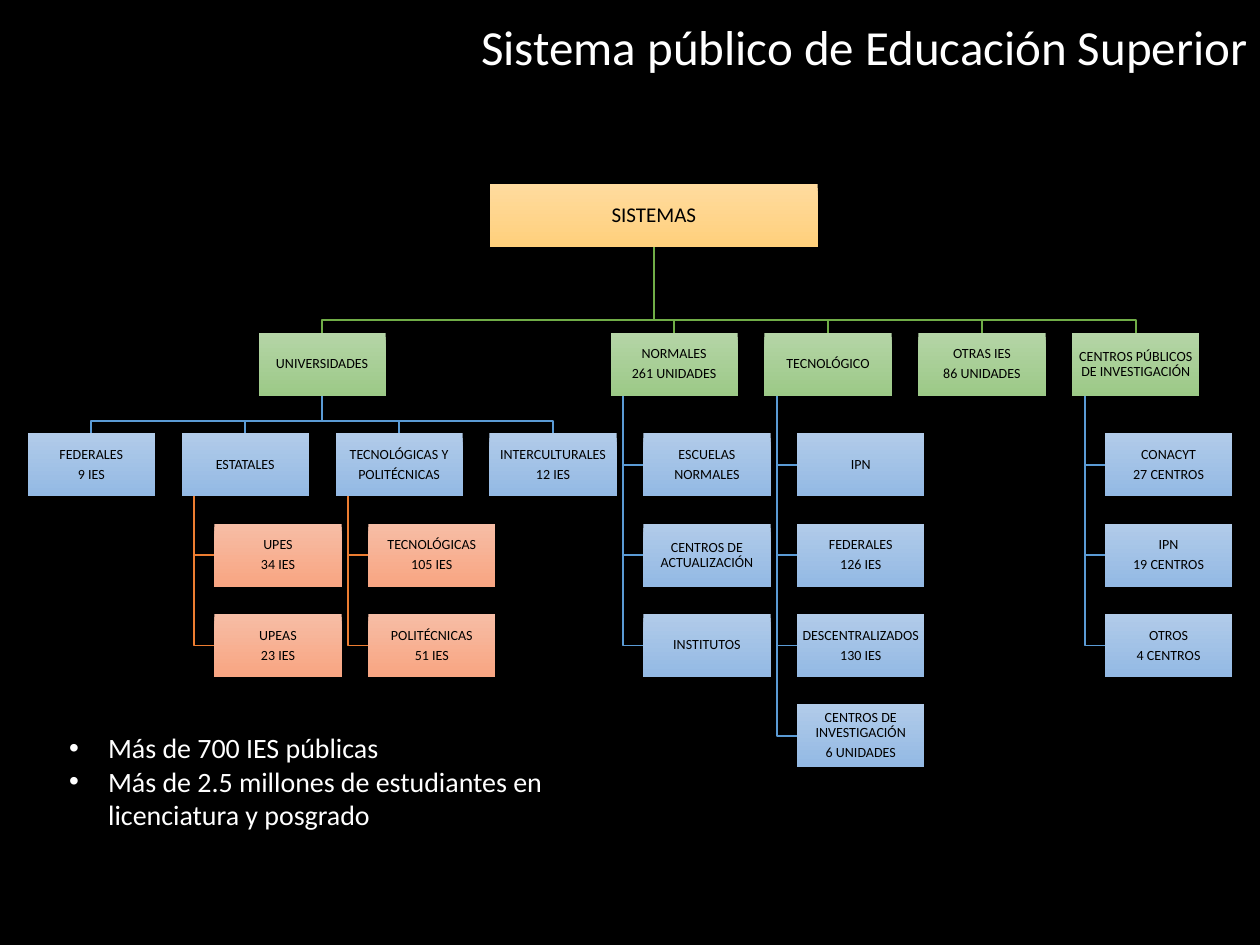
from lxml import etree
from pptx import Presentation
from pptx import util as u
from pptx.dml import color
from pptx.enum import shapes, text
from pptx.oxml import ns

FONT = "Calibri"
BOX_W, BOX_H = 1.01, 0.5
LEFT, PITCH = 0.22, (8.77 - 0.22) / 7
TOP_Y, SYSTEM_Y, UNIT_Y = 1.46, 2.64, 3.44
ROW = (5.59 - UNIT_Y) / 3
INDENT, SPINE, ELBOW = 0.26, 0.1, 0.1

GOLD = ("FFDB9E", "FFD07C")
GREEN = ("B5D5A7", "9CC987")
BLUE = ("B1CBE9", "93B9E4")
ORANGE = ("F7BDA5", "F8A582")
GREEN_LINE, BLUE_LINE, ORANGE_LINE = "70AD47", "5B9BD5", "ED7D31"

UNIVERSITIES = [
    ("FEDERALES\n9 IES", []),
    ("ESTATALES", ["UPES\n34 IES", "UPEAS\n23 IES"]),
    ("TECNOLÓGICAS Y\nPOLITÉCNICAS", ["TECNOLÓGICAS\n105 IES", "POLITÉCNICAS\n51 IES"]),
    ("INTERCULTURALES\n12 IES", []),
]
SYSTEMS = [
    ("NORMALES\n261 UNIDADES",
     ["ESCUELAS\nNORMALES", "CENTROS DE ACTUALIZACIÓN", "INSTITUTOS"]),
    ("TECNOLÓGICO",
     ["IPN", "FEDERALES\n126 IES", "DESCENTRALIZADOS\n130 IES",
      "CENTROS DE INVESTIGACIÓN\n6 UNIDADES"]),
    ("OTRAS IES\n86 UNIDADES", []),
    ("CENTROS PÚBLICOS DE INVESTIGACIÓN",
     ["CONACYT\n27 CENTROS", "IPN\n19 CENTROS", "OTROS\n4 CENTROS"]),
]
FACTS = "Más de 700 IES públicas\nMás de 2.5 millones de estudiantes en licenciatura y posgrado"


def rgb(value):
    return color.RGBColor.from_string(value)


def style_text(tf, size, hex_color, align):
    for p in tf.paragraphs:
        p.alignment = align
        for r in p.runs:
            r.font.name, r.font.size = FONT, u.Pt(size)
            r.font.color.rgb = rgb(hex_color)


def add_box(s, label, x, y, fill, w=BOX_W, size=8):
    sp = s.shapes.add_shape(shapes.MSO_SHAPE.RECTANGLE,
                            u.Inches(x), u.Inches(y), u.Inches(w), u.Inches(BOX_H))
    sp.shadow.inherit = False
    sp.line.fill.background()
    sp.fill.gradient()
    sp.fill.gradient_angle = 270
    for stop, value in zip(sp.fill.gradient_stops, fill):
        stop.color.rgb = rgb(value)
    tf = sp.text_frame
    tf.word_wrap = True
    tf.vertical_anchor = text.MSO_ANCHOR.MIDDLE
    tf.margin_left = tf.margin_right = tf.margin_top = tf.margin_bottom = u.Inches(0.01)
    tf.text = label
    style_text(tf, size, "000000", text.PP_ALIGN.CENTER)
    for p in tf.paragraphs:
        p.line_spacing = 0.9
        p.space_after = u.Pt(0.35 * size)


def add_path(s, points, hex_color):
    pts = [(u.Inches(x), u.Inches(y)) for x, y in points]
    builder = s.shapes.build_freeform(*pts[0])
    builder.add_line_segments(pts[1:], close=False)
    sp = builder.convert_to_shape()
    sp.shadow.inherit = False
    sp.fill.background()
    sp.line.color.rgb = rgb(hex_color)
    sp.line.width = u.Pt(1)


def add_fan(s, x, y, child_xs, child_y, hex_color):
    bend = child_y - ELBOW
    for child_x in child_xs:
        cx = child_x + BOX_W / 2
        add_path(s, [(x, y), (x, bend), (cx, bend), (cx, child_y)], hex_color)


def add_branch(s, label, children, x, y, fill, child_y, child_fill, line):
    spine, child_x = x + SPINE, x + INDENT
    for i, child in enumerate(children):
        top = child_y + i * ROW
        mid = top + BOX_H / 2
        add_path(s, [(spine, y + BOX_H), (spine, mid), (child_x, mid)], line)
        add_box(s, child, child_x, top, child_fill)
    add_box(s, label, x, y, fill)


def add_universities(s, x):
    xs = [LEFT + i * PITCH for i in range(len(UNIVERSITIES))]
    add_fan(s, x + BOX_W / 2, SYSTEM_Y + BOX_H, xs, UNIT_Y, BLUE_LINE)
    add_box(s, "UNIVERSIDADES", x, SYSTEM_Y, GREEN)
    for (label, children), unit_x in zip(UNIVERSITIES, xs):
        add_branch(s, label, children, unit_x, UNIT_Y, BLUE,
                   UNIT_Y + ROW, ORANGE, ORANGE_LINE)


def add_chart_tree(s, root_x, root_w):
    universities_x = LEFT + 1.5 * PITCH
    first = len(UNIVERSITIES)
    xs = [LEFT + (first + i) * PITCH - INDENT for i in range(len(SYSTEMS))]
    add_fan(s, root_x + root_w / 2, TOP_Y + BOX_H, [universities_x] + xs,
            SYSTEM_Y, GREEN_LINE)
    add_box(s, "SISTEMAS", root_x, TOP_Y, GOLD, root_w, 12)
    add_universities(s, universities_x)
    for (label, children), x in zip(SYSTEMS, xs):
        add_branch(s, label, children, x, SYSTEM_Y, GREEN, UNIT_Y, BLUE, BLUE_LINE)


def add_title(s, x, y, w, h):
    sp = s.shapes.title
    sp.left, sp.top, sp.width, sp.height = map(u.Inches, (x, y, w, h))
    sp.fill.solid()
    sp.fill.fore_color.rgb = rgb("000000")
    tf = sp.text_frame
    tf.text = "Sistema público de Educación Superior"
    tf.vertical_anchor = text.MSO_ANCHOR.MIDDLE
    style_text(tf, 28, "FFFFFF", text.PP_ALIGN.RIGHT)
    tf.paragraphs[0].line_spacing = 0.9


def add_facts(s, x, y, w, h):
    tf = s.shapes.add_textbox(*map(u.Inches, (x, y, w, h))).text_frame
    tf.word_wrap = True
    tf.text = FACTS
    style_text(tf, 16, "FFFFFF", text.PP_ALIGN.LEFT)
    for p in tf.paragraphs:
        pPr = p._p.get_or_add_pPr()
        pPr.set("marL", str(u.Inches(0.31)))
        pPr.set("indent", str(u.Inches(-0.31)))
        etree.SubElement(pPr, ns.qn("a:buFont"), typeface="Arial")
        etree.SubElement(pPr, ns.qn("a:buChar"), char="•")


def main():
    prs = Presentation()
    prs.slide_width, prs.slide_height = u.Inches(10), u.Inches(7.5)
    s = prs.slides.add_slide(prs.slide_layouts[5])
    s.background.fill.solid()
    s.background.fill.fore_color.rgb = rgb("000000")
    add_title(s, 0, 0, 10, 0.79)
    add_chart_tree(s, 3.89, 2.6)
    add_facts(s, 0.45, 5.75, 4.45, 0.91)
    prs.save("out.pptx")


if __name__ == "__main__":
    main()
